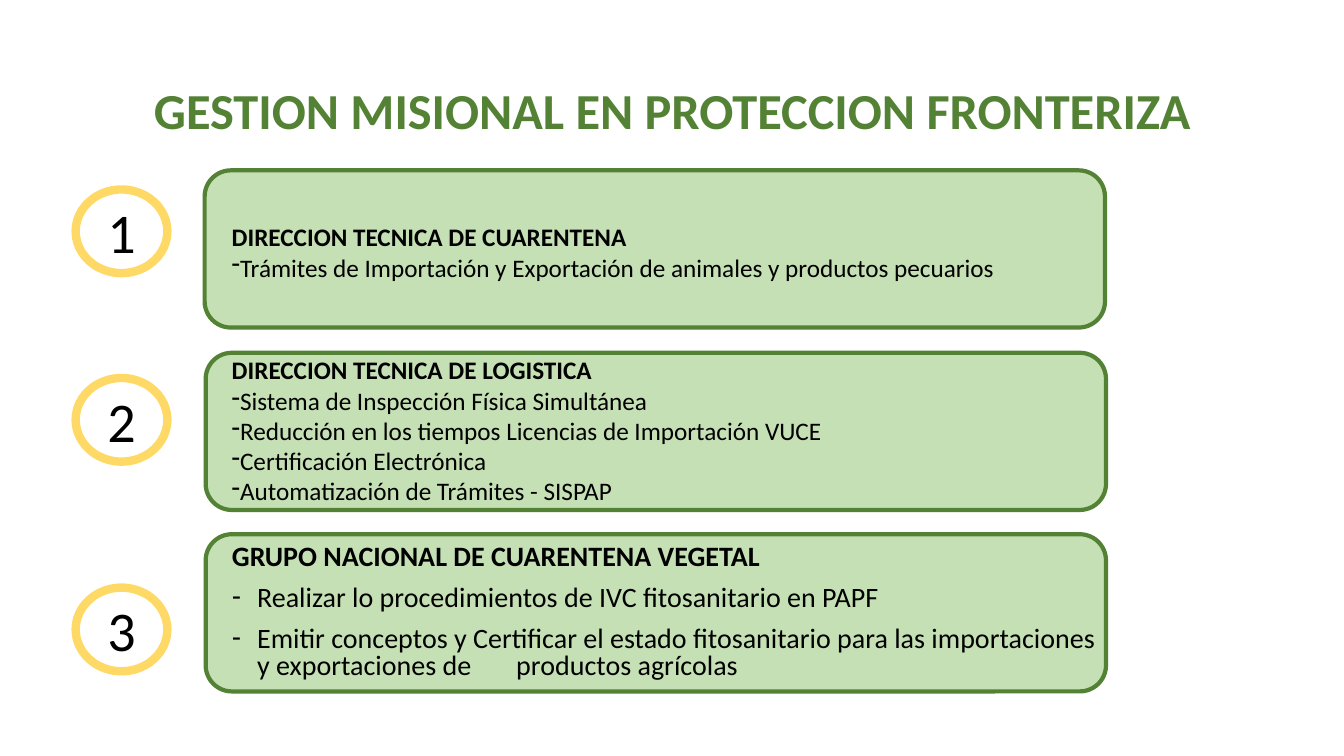
from lxml import etree
from pptx import Presentation
from pptx.dml.color import RGBColor
from pptx.enum.shapes import MSO_SHAPE as SHAPE
from pptx.enum.text import MSO_ANCHOR as ANCHOR, MSO_AUTO_SIZE as AUTO_SIZE, PP_ALIGN as ALIGN
from pptx.oxml.ns import qn
from pptx.util import Inches, Pt

GREEN = RGBColor(0x54, 0x82, 0x35)
LIGHT_GREEN = RGBColor(0xC5, 0xE0, 0xB4)
YELLOW = RGBColor(0xFF, 0xD9, 0x66)
WHITE = RGBColor(0xFF, 0xFF, 0xFF)
BLACK = RGBColor(0, 0, 0)


def set_font(paragraph, size, color, bold=False):
    font = paragraph.font
    font.name, font.size, font.bold = "Calibri", Pt(size), bold
    font.color.rgb = color


def write_list(frame, heading, items, size, indent=0, tab=None):
    """Fill frame with a bold heading and dash-bulleted items; indent and tab are in inches."""
    frame.word_wrap = True
    for i, line in enumerate([heading, *items]):
        paragraph = frame.paragraphs[0] if i == 0 else frame.add_paragraph()
        paragraph.text = line
        properties = paragraph._p.get_or_add_pPr()
        hanging = Inches(indent) if i else 0
        properties.set("marL", str(hanging))
        properties.set("indent", str(-hanging))
        if i:
            etree.SubElement(properties, qn("a:buFontTx"))
            etree.SubElement(properties, qn("a:buChar"), char="-")
        else:
            etree.SubElement(properties, qn("a:buNone"))
        if "\t" in line:
            stops = etree.SubElement(properties, qn("a:tabLst"))
            etree.SubElement(stops, qn("a:tab"), pos=str(Inches(tab)), algn="l")
        set_font(paragraph, size, BLACK, bold=i == 0)


prs = Presentation()
prs.slide_width, prs.slide_height = Inches(13.33), Inches(7.5)
slide = prs.slides.add_slide(prs.slide_layouts[1])
shapes = slide.shapes
title, plant_group = shapes.title, slide.placeholders[1]

# Green panels
for left, top in [(2.03, 1.69), (2.04, 3.5), (2.04, 5.3)]:
    panel = shapes.add_shape(SHAPE.ROUNDED_RECTANGLE, Inches(left), Inches(top), Inches(8.93), Inches(1.56))
    panel.shadow.inherit = False
    panel.fill.solid()
    panel.fill.fore_color.rgb = LIGHT_GREEN
    panel.line.color.rgb = GREEN
    panel.line.width = Pt(3)

# Placeholders go in front of the panels
for placeholder in (title, plant_group):
    placeholder.element.getparent().append(placeholder.element)

title.left, title.top, title.width, title.height = Inches(0.92), Inches(0.4), Inches(11.5), Inches(1.45)
title.text_frame.text = "GESTION MISIONAL EN PROTECCION FRONTERIZA"
title.text_frame.vertical_anchor = ANCHOR.MIDDLE
title.text_frame.auto_size = AUTO_SIZE.NONE
heading = title.text_frame.paragraphs[0]
heading.alignment = ALIGN.CENTER
heading.line_spacing = 0.9
set_font(heading, 36, GREEN, bold=True)

plant_group.left, plant_group.top = Inches(2.2), Inches(5.36)
plant_group.width, plant_group.height = Inches(8.93), Inches(1.56)
plant_group.text_frame.auto_size = AUTO_SIZE.NONE
write_list(plant_group.text_frame, "GRUPO NACIONAL DE CUARENTENA VEGETAL", [
    "Realizar lo procedimientos de IVC fitosanitario en PAPF",
    "Emitir conceptos y Certificar el estado fitosanitario para las importaciones "
    "y exportaciones de\tproductos agrícolas",
], size=20, indent=0.25, tab=2.82)
for i, paragraph in enumerate(plant_group.text_frame.paragraphs):
    paragraph.line_spacing = 0.8
    paragraph.space_before = Pt(10 if i else 0)

# Technical directorates
directorates = [
    (2.15, 8.23, 0.71, "DIRECCION TECNICA DE CUARENTENA", [
        "Trámites de Importación y Exportación de animales y productos pecuarios",
    ]),
    (3.47, 9.72, 1.92, "DIRECCION TECNICA DE LOGISTICA", [
        "Sistema de Inspección Física Simultánea",
        "Reducción en los tiempos Licencias de Importación VUCE",
        "Certificación Electrónica",
        "Automatización de Trámites - SISPAP",
    ]),
]
for top, width, height, name, tasks in directorates:
    directorate = shapes.add_textbox(Inches(2.2), Inches(top), Inches(width), Inches(height))
    write_list(directorate.text_frame, name, tasks, size=18)

# Numbered circles
for number, top in enumerate([1.88, 3.75, 5.83], start=1):
    circle = shapes.add_shape(SHAPE.OVAL, Inches(0.75), Inches(top), Inches(0.91), Inches(0.83))
    circle.shadow.inherit = False
    circle.fill.solid()
    circle.fill.fore_color.rgb = WHITE
    circle.line.color.rgb = YELLOW
    circle.line.width = Pt(6)
    circle.text_frame.text = str(number)
    circle.text_frame.vertical_anchor = ANCHOR.MIDDLE
    digit = circle.text_frame.paragraphs[0]
    digit.alignment = ALIGN.CENTER
    set_font(digit, 40, BLACK)

prs.save("out.pptx")
